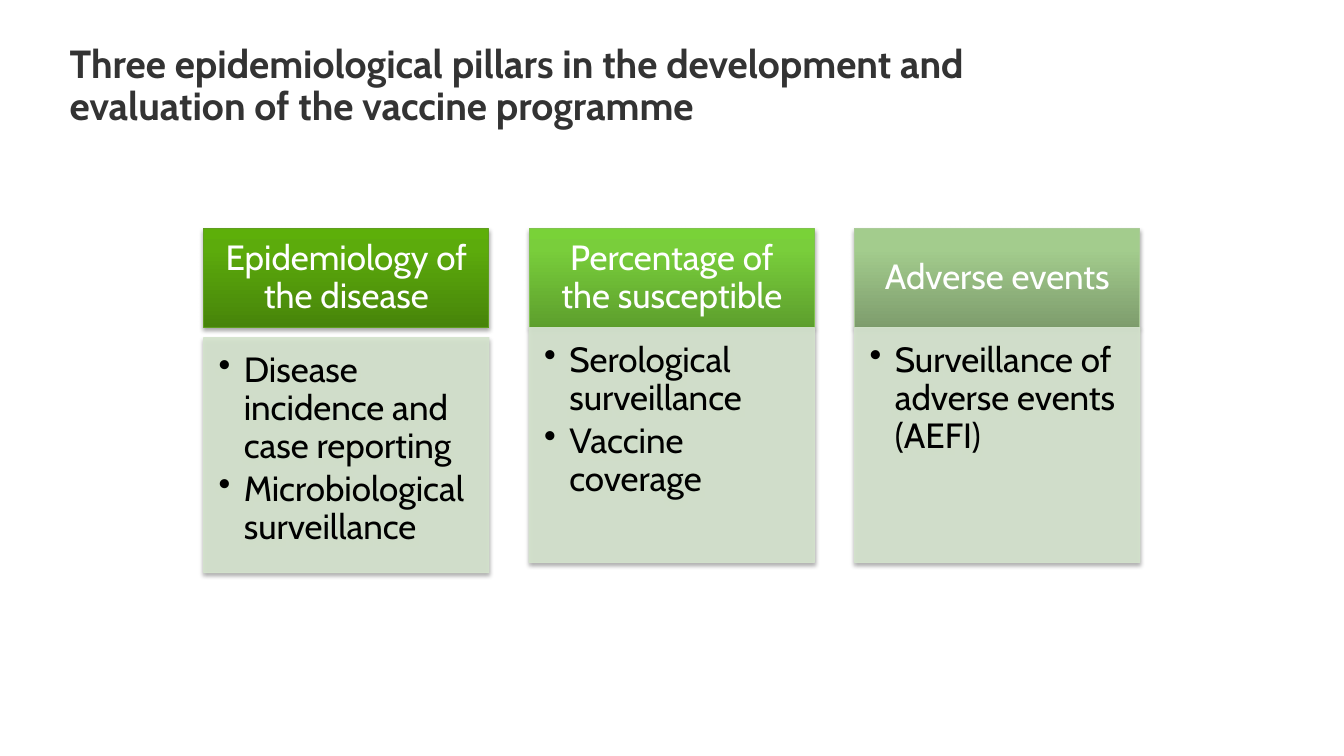
from pptx import Presentation
from pptx.dml.color import RGBColor as Rgb
from pptx.enum.shapes import MSO_SHAPE as Kind
from pptx.enum.text import MSO_ANCHOR as Anchor, MSO_AUTO_SIZE as Fit, PP_ALIGN as Align
from pptx.oxml.ns import qn
from pptx.util import Pt
from lxml.etree import SubElement as Sub

HUES = {"title": "333333", "head": "FFFFFF", "text": "000000",
        "body": "D4E3CD", "shade": "000000"}

# Heading, gradient from bottom to top, outline, body top, points
PILLARS = [
    ("Epidemiology of the disease", ("47840A", "5CAB0C", "5DAF09"), "5F9E20", 241.2,
     ["Disease incidence and case reporting", "Microbiological surveillance"]),
    ("Percentage of the susceptible", ("5D9F2D", "79CE3B", "79D238"), "80C34E", 234,
     ["Serological surveillance", "Vaccine coverage"]),
    ("Adverse events", ("7E9D6D", "A3CC8D", "A3CE8D"), "ABCB99", 234,
     ["Surveillance of adverse events (AEFI)"]),
]


def tint(node, hue, alpha=None):
    """Add a colour, with opacity in percent, to an XML node."""
    clr = Sub(node, qn("a:srgbClr"), val=hue)
    if alpha:
        Sub(clr, qn("a:alpha"), val=str(alpha * 1000))


class Deck:
    face = "Cabin"

    def __init__(self):
        self.prs = Presentation()
        self.prs.slide_width, self.prs.slide_height = Pt(960), Pt(540)
        self.slide = self.prs.slides.add_slide(self.prs.slide_layouts[5])

    def label(self, shape, lines, size, hue, pads, anchor, align, bold=False):
        frame = shape.text_frame
        frame.text = "\n".join(lines)
        frame.word_wrap, frame.auto_size = True, Fit.NONE
        frame.vertical_anchor = anchor
        (frame.margin_left, frame.margin_top,
         frame.margin_right, frame.margin_bottom) = map(Pt, pads)
        for para in frame.paragraphs:
            para.alignment, para.line_spacing = align, 0.9
            para.space_before = Pt(0)
            for run in para.runs:
                font = run.font
                font.name, font.size, font.bold = self.face, Pt(size), bold
                font.color.rgb = Rgb.from_string(hue)
        return frame

    def title(self, text, x, y, w, h):
        shape = self.slide.shapes.title
        shape.left, shape.top, shape.width, shape.height = map(Pt, (x, y, w, h))
        self.label(shape, [text], 28, HUES["title"], (0, 0, 0, 0),
                   Anchor.TOP, Align.LEFT, True)

    def box(self, x, y, w, h, edge):
        shape = self.slide.shapes.add_shape(Kind.RECTANGLE, *map(Pt, (x, y, w, h)))
        shape.line.color.rgb = Rgb.from_string(edge)
        shape.line.width = Pt(0.75)
        # Soft shadow straight below
        shape.shadow.inherit = False
        glow = Sub(shape._element.spPr.find(qn("a:effectLst")), qn("a:outerShdw"),
                   blurRad=str(Pt(3.1)), dist=str(Pt(1.8)), dir="5400000",
                   rotWithShape="0")
        tint(glow, HUES["shade"], 35)
        return shape

    def head(self, x, y, w, h, text, hues, edge):
        shape = self.box(x, y, w, h, edge)
        shape.fill.gradient()
        shape.fill.gradient_angle = 90
        stops = shape._element.spPr.find(".//" + qn("a:gsLst"))
        stops.clear()
        for pos, hue in zip((0, 80, 100), hues):
            tint(Sub(stops, qn("a:gs"), pos=str(pos * 1000)), hue)
        self.label(shape, [text], 25, HUES["head"], (14, 8, 14, 8),
                   Anchor.MIDDLE, Align.CENTER)

    def body(self, x, y, w, h, lines):
        shape = self.box(x, y, w, h, HUES["body"])
        shape.fill.solid()
        shape.fill.fore_color.rgb = Rgb.from_string(HUES["body"])
        # Fill and outline let a little show through
        for clr in shape._element.spPr.findall(".//" + qn("a:solidFill") + "/*"):
            Sub(clr, qn("a:alpha"), val="90000")
        frame = self.label(shape, lines, 25, HUES["text"], (10.7, 10.7, 14, 16),
                           Anchor.TOP, Align.LEFT)
        for para in frame.paragraphs:
            para.space_after = Pt(3.75)
            props = para._p.get_or_add_pPr()
            props.set("marL", str(Pt(18)))
            props.set("indent", str(Pt(-18)))
            Sub(props, qn("a:buChar"), char="•")


def main():
    deck = Deck()
    deck.title("Three epidemiological pillars in the development and "
               "evaluation of the vaccine programme", 49.7, 31.7, 755.3, 90)
    # Three columns at equal steps
    left, step, wide = 145.5, 232.5, 203.8
    for num, (text, hues, edge, top, lines) in enumerate(PILLARS):
        x = left + num * step
        deck.head(x, 163.4, wide, 70.6, text, hues, edge)
        deck.body(x, top, wide, 167.8, lines)
    deck.prs.save("out.pptx")


if __name__ == "__main__":
    main()
